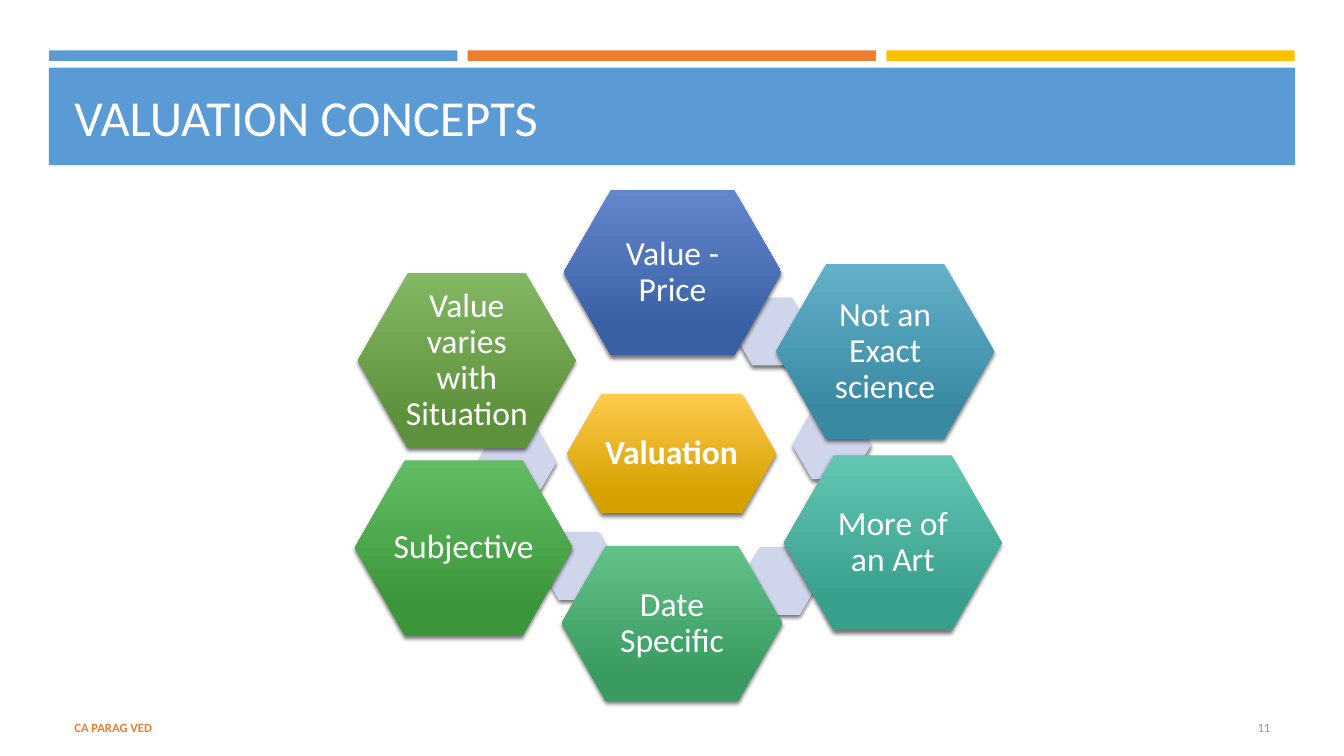
import dataclasses

import lxml.etree
import pptx
import pptx.dml.color
import pptx.enum.shapes
import pptx.enum.text
import pptx.oxml.ns
import pptx.util

Pt = pptx.util.Pt
Align = pptx.enum.text.PP_ALIGN
Preset = pptx.enum.shapes.MSO_SHAPE


@dataclasses.dataclass(frozen=True)
class Theme:
    font: str = "Calibri"
    blue: str = "5B9BD5"
    orange: str = "ED7D31"
    yellow: str = "FFC000"
    pale: str = "CFD5EA"
    white: str = "FFFFFF"
    shadow: str = "000000"
    title_size: float = 36
    label_size: float = 24
    footer_size: float = 9


def rgb(value):
    return pptx.dml.color.RGBColor.from_string(value)


class SlideBuilder:
    """Draws styled elements on one slide, with all lengths in points."""

    def __init__(self, slide, theme):
        self.slide = slide
        self.theme = theme

    def set_text(self, frame, text, size, color, align, bold=False):
        frame.word_wrap = True
        frame.vertical_anchor = pptx.enum.text.MSO_ANCHOR.MIDDLE
        paragraph = frame.paragraphs[0]
        paragraph.text = text
        paragraph.alignment = align
        font = paragraph.font
        font.name = self.theme.font
        font.size = Pt(size)
        font.bold = bold
        font.color.rgb = rgb(color)
        return paragraph

    def shape(self, preset, box, color):
        shape = self.slide.shapes.add_shape(preset, *map(Pt, box))
        shape.shadow.inherit = False
        shape.line.fill.background()
        shape.fill.solid()
        shape.fill.fore_color.rgb = rgb(color)
        return shape

    def bar(self, box, color):
        return self.shape(Preset.RECTANGLE, box, color)

    def text(self, box, text, size, color, align=Align.LEFT, bold=False):
        shape = self.slide.shapes.add_textbox(*map(Pt, box))
        self.set_text(shape.text_frame, text, size, color, align, bold)

    def hexagon(self, box, color, adjustment=0.289):
        shape = self.shape(Preset.HEXAGON, box, color)
        shape.adjustments[0] = adjustment
        qn = pptx.oxml.ns.qn
        effects = shape.element.spPr.find(qn("a:effectLst"))
        shadow = lxml.etree.SubElement(
            effects, qn("a:outerShdw"), blurRad=str(Pt(3)), dist=str(Pt(2)),
            dir="5400000", algn="ctr", rotWithShape="0")
        shade = lxml.etree.SubElement(shadow, qn("a:srgbClr"), val=self.theme.shadow)
        lxml.etree.SubElement(shade, qn("a:alpha"), val="55000")
        return shape

    def concept(self, box, text, top_color, bottom_color, bold=False):
        shape = self.hexagon(box, top_color, 0.286)
        shape.fill.gradient()
        shape.fill.gradient_angle = 270
        stops = zip(shape.fill.gradient_stops, (0, 0.84), (top_color, bottom_color))
        for stop, position, color in stops:
            stop.position = position
            stop.color.rgb = rgb(color)
        frame = shape.text_frame
        frame.margin_left = frame.margin_right = Pt(2.4)
        frame.margin_top = frame.margin_bottom = Pt(2.4)
        paragraph = self.set_text(frame, text, self.theme.label_size,
                                  self.theme.white, Align.CENTER, bold)
        paragraph.line_spacing = 0.9


def main():
    presentation = pptx.Presentation()
    presentation.slide_width = Pt(960)
    presentation.slide_height = Pt(540)
    slide = presentation.slides.add_slide(presentation.slide_layouts[6])
    theme = Theme()
    builder = SlideBuilder(slide, theme)

    for index, color in enumerate((theme.blue, theme.orange, theme.yellow)):
        builder.bar((35.1 + 299 * index, 36, 291.6, 7.6), color)
    builder.bar((34.9, 48.4, 890.3, 69.6), theme.blue)
    builder.text((46, 53.3, 868, 59.8), "VALUATION CONCEPTS",
                 theme.title_size, theme.white)

    builder.concept((405.2, 281.5, 149, 85), "Valuation", "FFCA4D", "D6A100", bold=True)

    ring = [
        ((523.4, 212.6), (402.7, 135.6, 155.5, 118), "Value - Price", "6387CC", "3960A5"),
        ((565.9, 293.8), (554.5, 188.6, 155.5, 124.9), "Not an Exact science", "63B0C9", "3989A2"),
        ((529.2, 390.8), (560, 325.3, 155.5, 124.9), "More of an Art", "62C6B3", "389F8D"),
        ((385.2, 380.1), (401.2, 390, 157.7, 110.5), "Date Specific", "62C188", "399B62"),
        ((341.3, 306), (253.5, 328.8, 155.5, 124.9), "Subjective", "62BC63", "3B963B"),
        (None, (255.7, 195.1, 155.5, 124.9), "Value varies with Situation", "83B763", "5E913C"),
    ]
    for link, box, label, top_color, bottom_color in ring:
        if link:
            builder.hexagon((*link, 56.2, 48.4), theme.pale)
        builder.concept(box, label, top_color, bottom_color)

    builder.text((831.5, 505.4, 83, 28.8), "11", theme.footer_size,
                 theme.orange, Align.RIGHT)
    builder.text((46, 505.4, 544, 28.8), "CA PARAG VED", theme.footer_size,
                 theme.orange, bold=True)
    presentation.save("out.pptx")


if __name__ == "__main__":
    main()
